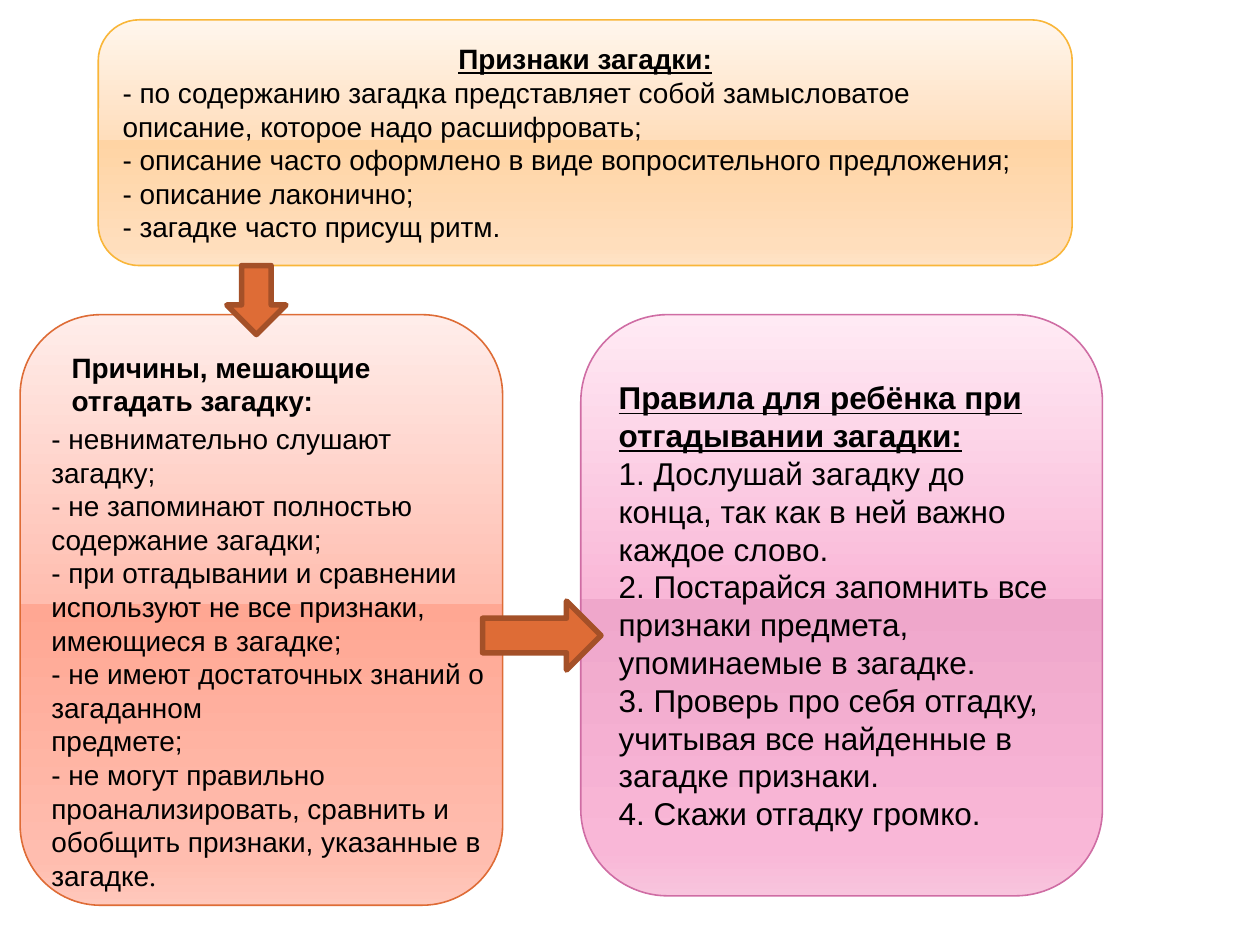
from lxml import etree
from pptx import Presentation
from pptx import util as u
from pptx.dml.color import RGBColor
from pptx.enum import shapes, text
from pptx.oxml.ns import qn

BLACK = RGBColor(0x00, 0x00, 0x00)
RUST = RGBColor(0xDE, 0x6C, 0x36)
BROWN = RGBColor(0xA4, 0x50, 0x28)
GOLD = RGBColor(0xF9, 0xB6, 0x39)
ROSE = RGBColor(0xCF, 0x6D, 0xA4)
STOPS = (0, 49, 49, 92, 100)
KIND = shapes.MSO_SHAPE

deck = Presentation()
deck.slide_width, deck.slide_height = u.Inches(10), u.Inches(7.5)
COL, ROW = deck.slide_width / 100, deck.slide_height / 100
slide = deck.slides.add_slide(deck.slide_layouts[6])


def place(col, row, wide, high):
    """Turn cells of a 100 by 100 grid into slide lengths."""
    return [round(n) for n in (col * COL, row * ROW, wide * COL, high * ROW)]


def write(par, lines, size, bold=False, line=False):
    """Add lines to a paragraph, with a line break before all but its first."""
    par.font.size, par.font.name = u.Pt(size), "Arial"
    par.font.color.rgb = BLACK
    for words in lines:
        if par.runs:
            par.add_line_break()
        run = par.add_run()
        run.text = words
        run.font.bold, run.font.underline = bold, line


# Panels with a glossy gradient
panels = {}
for name, cells, edge, tints in (
    ("signs", (7.8, 2.1, 77.3, 26), GOLD, "FFF6ED FFDEBC FFD4A4 FFDEBC FFE3C7"),
    ("rules", (46.1, 33.3, 41.4, 61.5), ROSE, "FFEAF4 F9B7D7 EFA7CB F9B7D7 F8C4DD"),
    ("causes", (1.6, 33.3, 38.3, 62.5), RUST, "FFEDEA FFBDAF FFA793 FFBDAF FFC8BC"),
):
    panel = slide.shapes.add_shape(KIND.ROUNDED_RECTANGLE, *place(*cells))
    panel.shadow.inherit = False
    panel.line.color.rgb, panel.line.width = edge, u.Pt(0.9)
    panel.fill.gradient()
    panel.fill.gradient_angle = 270
    stops = panel._element.spPr.find(qn("a:gradFill")).find(qn("a:gsLst"))
    for old in list(stops):
        stops.remove(old)
    for stop, tint in zip(STOPS, tints.split()):
        mark = etree.SubElement(stops, qn("a:gs"), pos=str(stop * 1000))
        etree.SubElement(mark, qn("a:srgbClr"), val=tint)
    frame = panel.text_frame
    frame.vertical_anchor = text.MSO_ANCHOR.MIDDLE
    frame.paragraphs[0].alignment = text.PP_ALIGN.LEFT
    panels[name] = frame

# Signs of a riddle
head = panels["signs"].paragraphs[0]
head.alignment = text.PP_ALIGN.CENTER
write(head, ["Признаки загадки:"], 16, True, True)
body = panels["signs"].add_paragraph()
body.alignment = text.PP_ALIGN.LEFT
write(body, [
    "- по содержанию загадка представляет собой замысловатое описание, которое надо расшифровать;",
    "- описание часто оформлено в виде вопросительного предложения;",
    "- описание лаконично;",
    "- загадке часто присущ ритм.",
], 16)

# Rules for the child
body = panels["rules"].paragraphs[0]
write(body, ["Правила для ребёнка при отгадывании загадки:"], 18, True, True)
write(body, [
    "1. Дослушай загадку до конца, так как в ней важно каждое слово.",
    "2. Постарайся запомнить все признаки предмета, упоминаемые в загадке.",
    "3. Проверь про себя отгадку, учитывая все найденные в загадке признаки.",
    "4. Скажи отгадку громко.",
], 18)

# Causes of failure: list and heading lie over their panel
for cells, anchor, bold, pars in (
    ((3.1, 43.7, 36.7, 51.6), text.MSO_ANCHOR.MIDDLE, False, (
        ["- невнимательно слушают загадку;",
         "- не запоминают полностью содержание загадки;",
         "- при отгадывании и сравнении используют не все признаки, имеющиеся в загадке;",
         "- не имеют достаточных знаний о загаданном"],
        ["предмете;",
         "- не могут правильно проанализировать, сравнить и обобщить признаки, указанные в загадке"],
    )),
    ((4.7, 36.4, 30.5, 8.5), text.MSO_ANCHOR.TOP, True, (
        ["Причины, мешающие"], ["отгадать загадку:"],
    )),
):
    frame = slide.shapes.add_textbox(*place(*cells)).text_frame
    frame.word_wrap, frame.vertical_anchor = True, anchor
    for i, lines in enumerate(pars):
        par = frame.add_paragraph() if i else frame.paragraphs[0]
        write(par, lines, 16, bold)
    if not bold:
        dot = par.add_run()
        dot.text, dot.font.name = ".", "Times New Roman"

# Block arrows between the panels
for kind, cells in (
    (KIND.DOWN_ARROW, (18, 28.1, 4.7, 7.3)),
    (KIND.RIGHT_ARROW, (38.3, 63.6, 9.4, 7.3)),
):
    arrow = slide.shapes.add_shape(kind, *place(*cells))
    arrow.shadow.inherit = False
    arrow.fill.solid()
    arrow.fill.fore_color.rgb = RUST
    arrow.line.color.rgb, arrow.line.width = BROWN, u.Pt(3.15)

deck.save("out.pptx")
